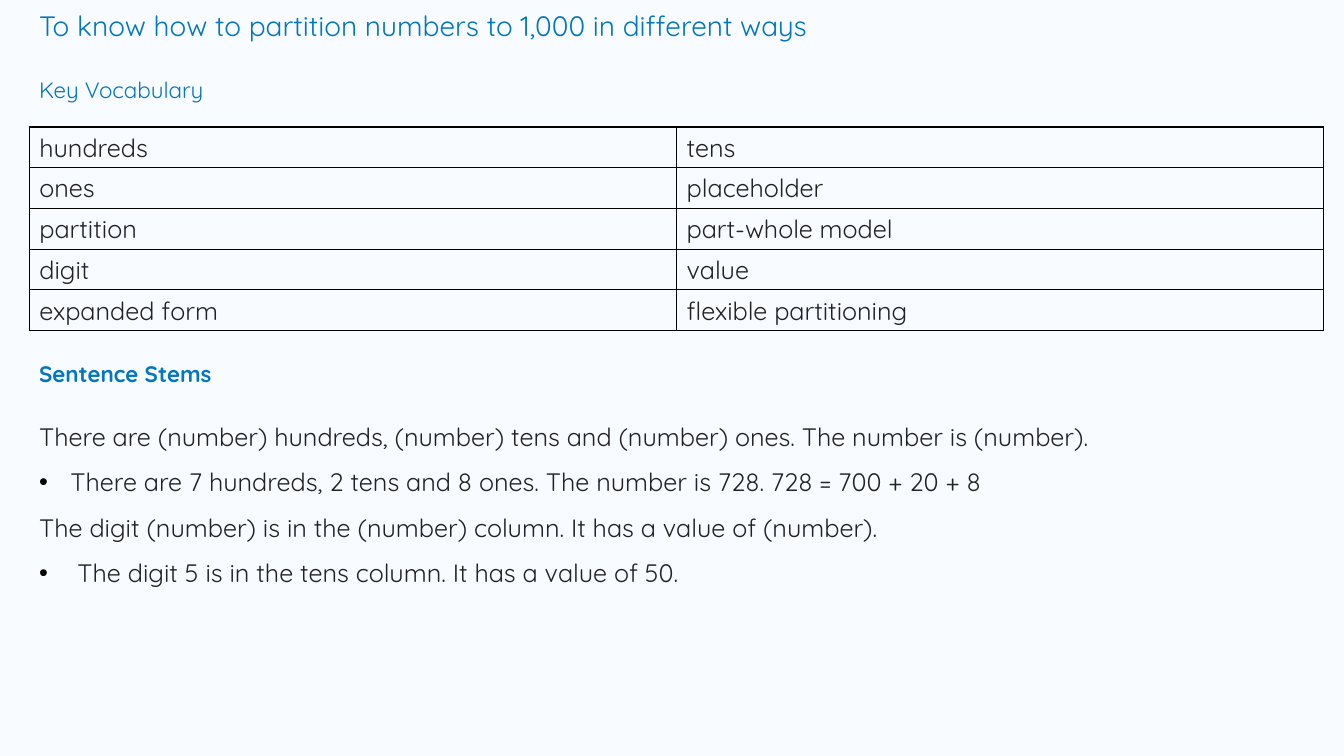
import pptx
import pptx.util
import pptx.dml.color
import pptx.enum.text
import pptx.oxml.ns
import lxml.etree

# Content
TITLE = "To know how to partition numbers to 1,000 in different ways"
VOCABULARY_HEADING = "Key Vocabulary"
VOCABULARY = [
    ("hundreds", "tens"),
    ("ones", "placeholder"),
    ("partition", "part-whole model"),
    ("digit", "value"),
    ("expanded form", "flexible partitioning"),
]
STEMS_HEADING = "Sentence Stems"
# Each stem: text, bullet indent in inches (0 for no bullet)
STEMS = [
    ("There are (number) hundreds, (number) tens and (number) ones. The number is (number).", 0),
    ("There are 7 hundreds, 2 tens and 8 ones. The number is 728. 728 = 700 + 20 + 8", 0.31),
    ("The digit (number) is in the (number) column. It has a value of (number).", 0),
    ("The digit 5 is in the tens column. It has a value of 50.", 0.38),
]

# Style and layout, in inches
FONT = "Quicksand"
BLUE, INK, BLACK, PAPER = "0277BD", "222222", "000000", "F8FBFF"
WIDTH, HEIGHT = 13.33, 7.5
LEFT = 0.29
TABLE_WIDTH, TABLE_HEIGHT = 12.84, 2.02
HEADING_SIZE = (2.97, 0.46)
inch = pptx.util.Inches


def rgb(value):
    return pptx.dml.color.RGBColor.from_string(value)


def write(p, text, size=18, color=INK, bold=False):
    r = p.add_run()
    r.text = text
    r.font.name, r.font.size, r.font.bold = FONT, pptx.util.Pt(size), bold
    r.font.color.rgb = rgb(color)


def add_box(slide, top, width, height):
    sp = slide.shapes.add_textbox(inch(LEFT), inch(top), inch(width), inch(height))
    sp.text_frame.word_wrap = True
    return sp.text_frame


def add_child(parent, tag, **attributes):
    return lxml.etree.SubElement(parent, pptx.oxml.ns.qn(tag), **attributes)


def add_bullet(p, indent):
    pPr = p._p.get_or_add_pPr()
    pPr.set("marL", str(inch(indent)))
    pPr.set("indent", str(-inch(indent)))
    add_child(add_child(pPr, "a:buClr"), "a:srgbClr", val=BLACK)
    add_child(pPr, "a:buFont", typeface="Arial")
    add_child(pPr, "a:buChar", char="•")


def add_borders(cell):
    tcPr = cell._tc.get_or_add_tcPr()
    for side in ("a:lnL", "a:lnR", "a:lnT", "a:lnB"):
        ln = add_child(tcPr, side, w=str(pptx.util.Pt(1)))
        add_child(add_child(ln, "a:solidFill"), "a:srgbClr", val=BLACK)


prs = pptx.Presentation()
prs.slide_width, prs.slide_height = inch(WIDTH), inch(HEIGHT)
slide = prs.slides.add_slide(prs.slide_layouts[6])
slide.background.fill.solid()
slide.background.fill.fore_color.rgb = rgb(PAPER)

# Title and headings
for text, top, box_size, size, bold in (
    (TITLE, 0.04, (12.34, 0.44), 20, False),
    (VOCABULARY_HEADING, 0.71, HEADING_SIZE, 16, False),
    (STEMS_HEADING, 3.52, HEADING_SIZE, 16, True),
):
    tf = add_box(slide, top, *box_size)
    write(tf.paragraphs[0], text, size=size, color=BLUE, bold=bold)

# Sentence stems
tf = add_box(slide, 3.98, 12.83, 2.37)
for i, (text, indent) in enumerate(STEMS):
    p = tf.add_paragraph() if i else tf.paragraphs[0]
    p.line_spacing = 1.5
    if indent:
        add_bullet(p, indent)
    write(p, text)

# Vocabulary table
rows, columns = len(VOCABULARY), len(VOCABULARY[0])
table = slide.shapes.add_table(rows, columns, inch(LEFT), inch(1.26),
                               inch(TABLE_WIDTH), inch(TABLE_HEIGHT)).table
table.first_row = table.horz_banding = False
for row, words in enumerate(VOCABULARY):
    for column, word in enumerate(words):
        cell = table.cell(row, column)
        add_borders(cell)
        cell.fill.background()
        write(cell.text_frame.paragraphs[0], word)

prs.save("out.pptx")
